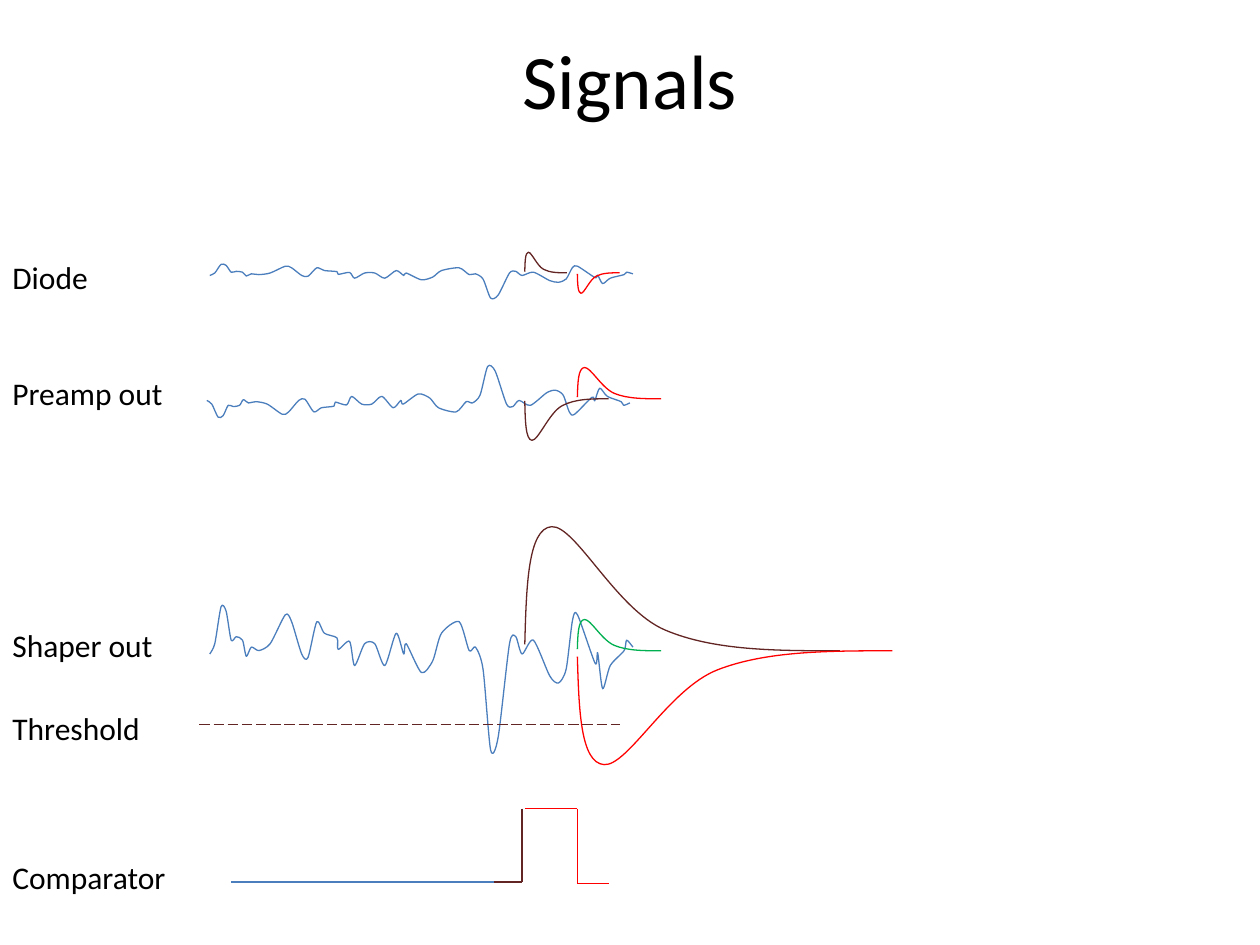
from pptx import Presentation
from pptx.dml.color import RGBColor
from pptx.enum.dml import MSO_LINE
from pptx.enum.shapes import MSO_CONNECTOR
from pptx.enum.text import MSO_ANCHOR, MSO_AUTO_SIZE, PP_ALIGN
from pptx.oxml.ns import qn
from pptx.oxml.xmlchemy import OxmlElement
from pptx.util import Cm, Pt

BLACK = RGBColor(0x00, 0x00, 0x00)
BLUE = RGBColor(0x4B, 0x7E, 0xBC)
BROWN = RGBColor(0x63, 0x25, 0x23)
RED = RGBColor(0xFF, 0x00, 0x00)
GREEN = RGBColor(0x00, 0xB0, 0x50)

# Bezier outline: a start point, then two control points and an end per curve
PULSE = [(0, 95), (0.5, 49), (1, 3), (8.5, 1.5), (16, 0), (29, 67),
         (44.5, 83.5), (60, 100), (80, 100), (100, 100)]
# Points that the noise passes through
KNOTS = [
    (0, 44), (4, 35), (9, 3), (13, 7), (17, 32), (21, 29), (26, 32), (29, 46),
    (33, 38), (39, 41), (48, 35), (60, 10), (65, 16), (73, 44), (78, 47),
    (85, 16), (91, 26), (101, 30), (102, 40), (111, 33), (115, 54), (123, 35),
    (131, 35), (139, 54), (148, 26), (154, 44), (156, 35), (168, 60), (177, 50),
    (184, 26), (198, 16), (206, 41), (211, 38), (217, 57), (223, 127),
    (229, 116), (238, 35), (243, 29), (248, 44), (257, 32), (270, 63),
    (277, 69), (283, 57), (288, 15), (292, 10), (306, 52), (308, 43),
    (312, 74), (318, 54), (329, 41), (331, 32), (336, 38),
]

prs = Presentation()
prs.slide_width, prs.slide_height = Cm(25.4), Cm(19.05)
shapes = prs.slides.add_slide(prs.slide_layouts[6]).shapes


def style_line(line, color):
    line.color.rgb = color
    line.width = Pt(0.75)


def draw_curve(outline, left, top, width, height, color):
    """Fit a Bezier outline to a box; a negative height flips it upwards."""
    xs, ys = zip(*outline)
    x_scale = width / (max(xs) - min(xs))
    y_scale = height / (max(ys) - min(ys))
    points = [(Cm(left + (x - min(xs)) * x_scale),
               Cm(top + (y - min(ys)) * y_scale)) for x, y in outline]
    builder = shapes.build_freeform(*points[0])
    builder.add_line_segments(points[1:], close=False)
    curve = builder.convert_to_shape()
    curve.fill.background()
    curve.shadow.inherit = False
    style_line(curve.line, color)

    path = curve.element.find(".//" + qn("a:path"))
    steps = path.findall(qn("a:lnTo"))
    for first in range(0, len(steps), 3):
        bezier = OxmlElement("a:cubicBezTo")
        steps[first].addprevious(bezier)
        for step in steps[first:first + 3]:
            bezier.append(step[0])
            path.remove(step)


# Smooth the noise: each tangent follows the line between a knot's neighbours
noise = KNOTS[:1]
padded = KNOTS[:1] + KNOTS + KNOTS[-1:]
for before, start, end, after in zip(padded, padded[1:], padded[2:], padded[3:]):
    noise += [
        tuple(s + (e - b) / 8 for b, s, e in zip(before, start, end)),
        tuple(e - (a - s) / 8 for s, e, a in zip(start, end, after)),
        end,
    ]
for left, top, height in [(4.23, 5.31, 0.74), (4.17, 8.44, -1.11), (4.23, 12.15, 3.14)]:
    draw_curve(noise, left, top, 8.53, height, BLUE)

# Title and row labels
title_format = {"word_wrap": True, "vertical_anchor": MSO_ANCHOR.MIDDLE}
label_format = {"word_wrap": False, "auto_size": MSO_AUTO_SIZE.SHAPE_TO_FIT_TEXT}
captions = [("Signals", (1.27, 0, 22.86, 3.18), 44, PP_ALIGN.CENTER, title_format)]
captions += [
    (label, (0, top, width, 1.02), 18, PP_ALIGN.LEFT, label_format)
    for label, top, width in [
        ("Diode", 5.08, 2.06), ("Preamp out", 7.42, 3.58), ("Shaper out", 12.5, 3.38),
        ("Threshold", 14.17, 3.1), ("Comparator", 17.17, 3.63),
    ]
]
for caption, box, size, align, frame_format in captions:
    frame = shapes.add_textbox(*map(Cm, box)).text_frame
    for attribute, value in frame_format.items():
        setattr(frame, attribute, value)
    paragraph = frame.paragraphs[0]
    paragraph.alignment = align
    run = paragraph.add_run()
    run.text = caption
    for attribute, value in {"name": "Calibri", "size": Pt(size)}.items():
        setattr(run.font, attribute, value)
    run.font.color.rgb = BLACK

# Pulses: start, baseline, length, upward amplitude
early, late = 10.58, 11.64
diode, preamp, shaper = 5.5, 8.04, 13.12
short, medium, long = 0.85, 1.69, 6.35
for start, baseline, length, amplitude, color in [
    (early, preamp, medium, -0.85, BROWN),
    (early, diode, short, 0.42, BROWN),
    (early, shaper, long, 2.54, BROWN),
    (late, shaper, long, -2.33, RED),
    (late, preamp, medium, 0.64, RED),
    (late, diode, short, -0.42, RED),
    (late, shaper, medium, 0.64, GREEN),
]:
    draw_curve(PULSE, start, baseline - amplitude, length, amplitude, color)

# Threshold level and comparator output
threshold, high, low, after_low, rise = 14.61, 16.3, 17.78, 17.81, 10.52
for x1, y1, x2, y2, color, dash in [
    (4.02, threshold, 12.5, threshold, BROWN, MSO_LINE.LONG_DASH),
    (early, high, late, high, RED, None),
    (late, high, late, after_low, RED, None),
    (late, after_low, 12.28, after_low, RED, None),
    (rise, high, rise, low, BROWN, None),
    (9.88, low, rise, low, BROWN, None),
    (9.95, low, 4.66, low, BLUE, None),
]:
    level = shapes.add_connector(MSO_CONNECTOR.STRAIGHT, Cm(x1), Cm(y1), Cm(x2), Cm(y2))
    style_line(level.line, color)
    level.line.dash_style = dash
    level.element.spPr.append(OxmlElement("a:effectLst"))

prs.save("out.pptx")
